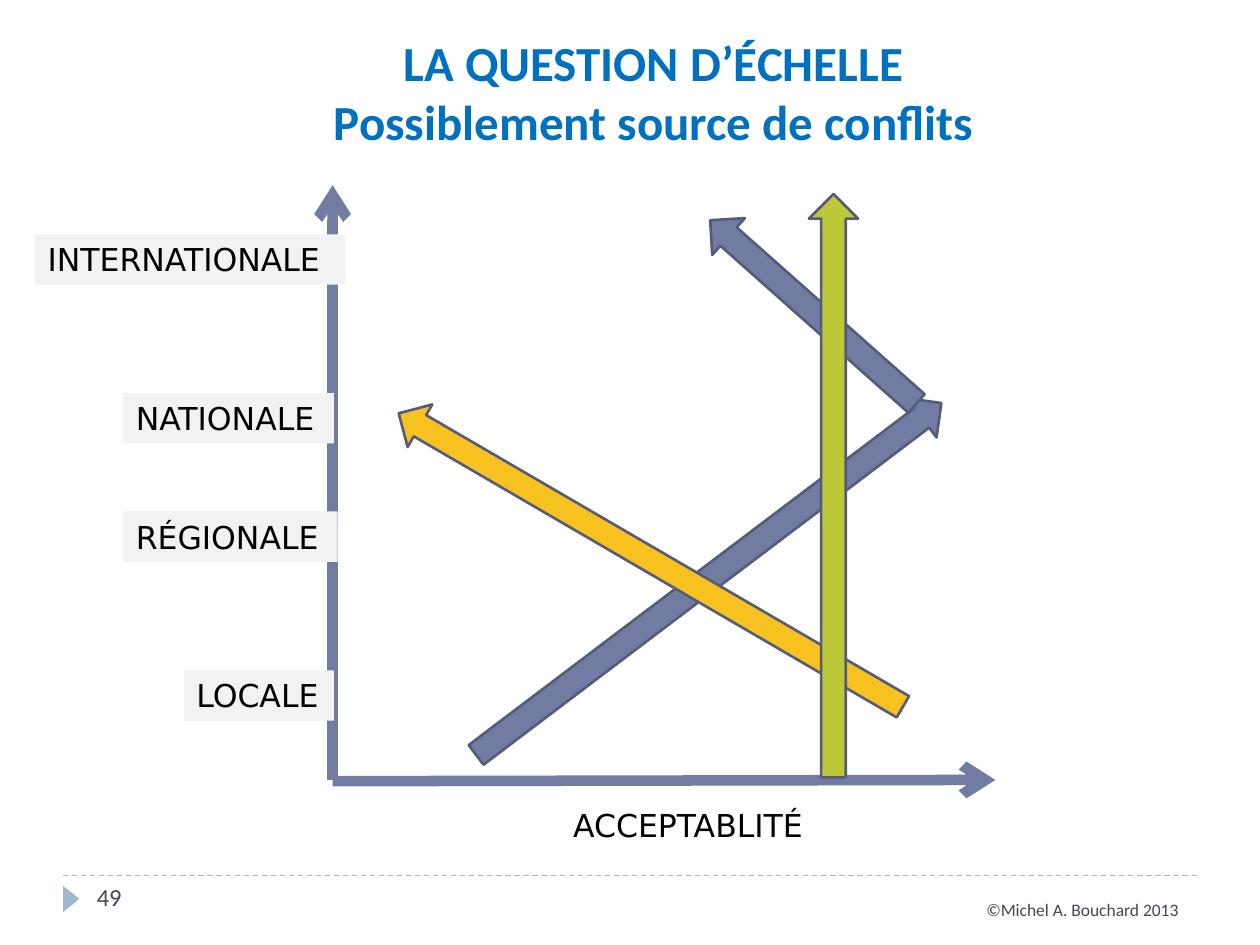
from lxml import etree
from pptx import Presentation
from pptx.dml.color import RGBColor
from pptx.enum.dml import MSO_LINE_DASH_STYLE as Dash
from pptx.enum.shapes import MSO_CONNECTOR as Connector, MSO_SHAPE as Shape
from pptx.enum.text import MSO_ANCHOR as Anchor, PP_ALIGN as Align
from pptx.oxml.ns import qn
from pptx.util import Inches, Pt

COLORS = {
    "title": "0070C0",
    "text": "000000",
    "footer": "464653",
    "rule": "9FB8CD",
    "label": "F2F2F2",
    "slate": "727CA3",
    "outline": "545C79",
    "gold": "F7C120",
    "lime": "BCC838",
}
LABEL_HEIGHT = 0.4
ARROW_HEIGHT = 0.39


def color(name):
    return RGBColor.from_string(COLORS[name])


def add_text(page, text, left, top, width, height, size=18, font="DejaVu Sans",
             ink="text", bold=False, align=Align.LEFT, anchor=Anchor.TOP, fill=None):
    box = page.shapes.add_textbox(Inches(left), Inches(top), Inches(width), Inches(height))
    if fill:
        box.fill.solid()
        box.fill.fore_color.rgb = color(fill)
    frame = box.text_frame
    frame.word_wrap = True
    frame.vertical_anchor = anchor
    for index, line in enumerate(text.split("\n")):
        para = frame.paragraphs[0] if index == 0 else frame.add_paragraph()
        para.alignment = align
        span = para.add_run()
        span.text = line
        span.font.size = Pt(size)
        span.font.name = font
        span.font.bold = bold
        span.font.color.rgb = color(ink)


def add_shape(page, kind, left, top, width, height, fill, rotation=0, outline=None):
    shape = page.shapes.add_shape(kind, Inches(left), Inches(top), Inches(width), Inches(height))
    shape.shadow.inherit = False
    shape.rotation = rotation
    shape.fill.solid()
    shape.fill.fore_color.rgb = color(fill)
    if outline:
        shape.line.color.rgb = color(outline)
        shape.line.width = Pt(1.5)
    else:
        shape.line.fill.background()


def add_line(page, start, end, ink, width, dash=None, arrow=False):
    line = page.shapes.add_connector(Connector.STRAIGHT, *map(Inches, start + end))
    line.line.color.rgb = color(ink)
    line.line.width = Pt(width)
    if dash:
        line.line.dash_style = dash
    properties = line._element.spPr
    if arrow:
        etree.SubElement(properties.find(qn("a:ln")), qn("a:tailEnd"), type="arrow")
    etree.SubElement(properties, qn("a:effectLst"))


def add_footer(page):
    add_line(page, (0.5, 6.95), (9.5, 6.95), "rule", 0.75, dash=Dash.DASH)
    add_shape(page, Shape.ISOSCELES_TRIANGLE, 0.46, 7.07, 0.21, 0.13, "rule", rotation=90)
    add_text(page, "49", 0.67, 6.95, 2.17, 0.4, size=14, font="Calibri", ink="footer")
    add_text(page, "©Michel A. Bouchard 2013", 7.6, 7.09, 1.85, 0.26, size=10,
             font="Calibri", ink="footer", align=Align.RIGHT, anchor=Anchor.MIDDLE)


def add_diagram(page):
    add_line(page, (2.64, 6.19), (2.64, 1.47), "slate", 6, arrow=True)
    add_line(page, (2.64, 6.2), (7.9, 6.19), "slate", 6, arrow=True)

    scales = [
        ("LOCALE", 1.46, 5.32, 1.19),
        ("RÉGIONALE", 0.98, 4.06, 1.7),
        ("NATIONALE", 0.98, 3.12, 1.67),
        ("INTERNATIONALE", 0.28, 1.86, 2.46),
    ]
    for name, left, top, width in scales:
        add_text(page, name, left, top, width, LABEL_HEIGHT, fill="label")

    trends = [
        (3.31, 4.4, 4.63, "slate", 322.9),
        (2.85, 4.25, 4.63, "gold", 210.2),
        (5.36, 2.28, 2.19, "slate", 221.6),
        (4.3, 3.66, 4.63, "lime", 270),
    ]
    for left, top, length, fill, rotation in trends:
        add_shape(page, Shape.RIGHT_ARROW, left, top, length, ARROW_HEIGHT, fill,
                  rotation=rotation, outline="outline")


def main():
    deck = Presentation()
    deck.slide_width = Inches(10)
    deck.slide_height = Inches(7.5)
    page = deck.slides.add_slide(deck.slide_layouts[6])
    add_footer(page)
    add_diagram(page)
    add_text(page, "LA QUESTION D’ÉCHELLE\nPossiblement source de conflits",
             2.01, 0.21, 6.35, 1.04, size=28, font="Calibri", ink="title",
             bold=True, align=Align.CENTER)
    add_text(page, "ACCEPTABLITÉ", 4.45, 6.35, 2.09, LABEL_HEIGHT)
    deck.save("out.pptx")


if __name__ == "__main__":
    main()
